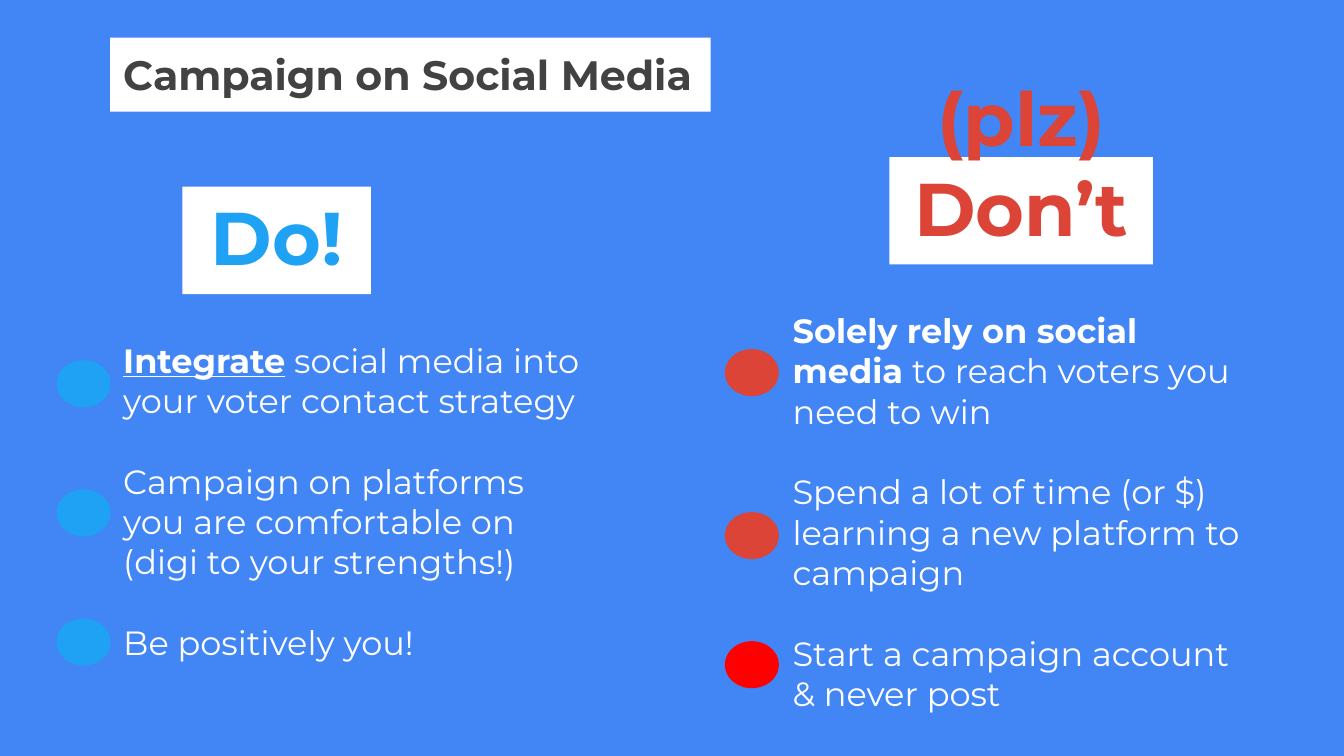
from pptx import Presentation
from pptx.dml.color import RGBColor
from pptx.enum.shapes import MSO_SHAPE
from pptx.enum.text import MSO_ANCHOR, PP_ALIGN
from pptx.util import Cm, Pt

BLUE = RGBColor(0x42, 0x85, 0xF4)
SKY = RGBColor(0x1F, 0xA2, 0xF4)
BRICK = RGBColor(0xDB, 0x44, 0x37)
RED = RGBColor(0xFF, 0x00, 0x00)
GREY = RGBColor(0x42, 0x42, 0x42)
WHITE = RGBColor(0xFF, 0xFF, 0xFF)


class SlideBuilder:
    font_name = "Montserrat"
    body_size = Pt(18)
    paragraph_gap = Pt(21.6)
    inset = Cm(0.25)

    def __init__(self, page):
        self.page = page

    def background(self, color):
        fill = self.page.background.fill
        fill.solid()
        fill.fore_color.rgb = color

    def shape(self, kind, left, top, width, height, color):
        shape = self.page.shapes.add_shape(
            kind, Cm(left), Cm(top), Cm(width), Cm(height))
        shape.shadow.inherit = False
        shape.fill.solid()
        shape.fill.fore_color.rgb = color
        shape.line.fill.background()
        return shape

    def frame(self, box, anchor):
        """Apply the shared wrapping and margins, and return the text frame."""
        frame = box.text_frame
        frame.word_wrap = True
        frame.vertical_anchor = anchor
        frame.margin_left = frame.margin_right = self.inset
        frame.margin_top = frame.margin_bottom = self.inset
        return frame

    def style(self, span, size, color, bold):
        span.font.name = self.font_name
        span.font.size = size
        span.font.color.rgb = color
        span.font.bold = bold

    def heading(self, text, left, top, width, height, size, color, align):
        box = self.shape(MSO_SHAPE.RECTANGLE, left, top, width, height, WHITE)
        frame = self.frame(box, MSO_ANCHOR.BOTTOM)
        frame.text = text
        para = frame.paragraphs[0]
        para.alignment = align
        self.style(para.runs[0], size, color, True)

    def advice(self, left, top, lead, items, underline=False):
        """Add a column of paragraphs whose first one opens with a bold lead."""
        box = self.page.shapes.add_textbox(
            Cm(left), Cm(top), Cm(9.17), Cm(7.01))
        frame = self.frame(box, MSO_ANCHOR.TOP)
        frame.text = lead
        first = frame.paragraphs[0]
        self.style(first.runs[0], self.body_size, WHITE, True)
        if underline:
            first.runs[0].font.underline = True
        for index, item in enumerate(items):
            para = frame.add_paragraph() if index else first
            if index:
                para.space_before = self.paragraph_gap
            span = para.add_run()
            span.text = item
            self.style(span, self.body_size, WHITE, False)

    def dots(self, left, places):
        for top, color in places:
            self.shape(MSO_SHAPE.OVAL, left, top, 1.02, 0.89, color)


def main():
    deck = Presentation()
    deck.slide_width, deck.slide_height = Cm(25.4), Cm(14.29)
    builder = SlideBuilder(deck.slides.add_slide(deck.slide_layouts[6]))
    builder.background(BLUE)

    builder.heading("Campaign on Social Media", 2.08, 0.71, 11.35, 1.4,
                    Pt(22), GREY, PP_ALIGN.LEFT)
    builder.heading("Do!", 3.45, 3.53, 3.56, 2.03,
                    Pt(40), SKY, PP_ALIGN.CENTER)
    builder.heading("(plz) Don’t", 16.81, 2.97, 4.98, 2.03,
                    Pt(40), BRICK, PP_ALIGN.CENTER)

    builder.advice(2.08, 6.17, "Integrate", [
        " social media into your voter contact strategy",
        "Campaign on platforms you are comfortable on (digi to your strengths!)",
        "Be positively you!",
    ], underline=True)
    builder.dots(1.07, [(6.81 + 2.44 * row, SKY) for row in range(3)])

    builder.advice(14.73, 5.61, "Solely rely on social media", [
        " to reach voters you need to win",
        "Spend a lot of time (or $) learning a new platform to campaign",
        "Start a campaign account & never post",
    ])
    builder.dots(13.7, [(6.6, BRICK), (9.68, BRICK), (12.12, RED)])

    deck.save("out.pptx")


if __name__ == "__main__":
    main()
